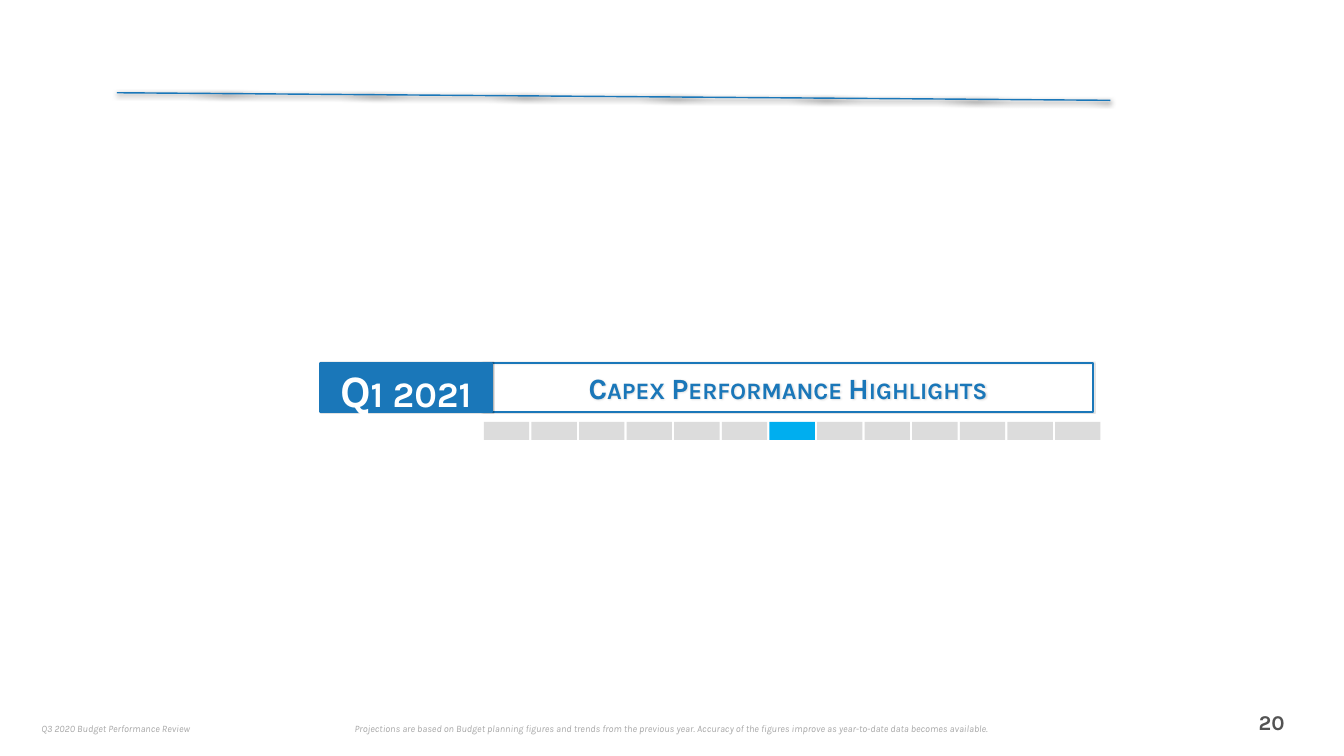
from lxml import etree
from pptx import Presentation
from pptx.dml.color import RGBColor
from pptx.enum.shapes import MSO_CONNECTOR, MSO_SHAPE
from pptx.enum.text import MSO_ANCHOR, MSO_AUTO_SIZE, PP_ALIGN
from pptx.oxml.ns import qn
from pptx.util import Pt

RECT = MSO_SHAPE.RECTANGLE
STRAIGHT = MSO_CONNECTOR.STRAIGHT
LEFT, CENTER = PP_ALIGN.LEFT, PP_ALIGN.CENTER
TOP, MIDDLE = MSO_ANCHOR.TOP, MSO_ANCHOR.MIDDLE
NO_FIT = MSO_AUTO_SIZE.NONE

BLUE = RGBColor(0x1A, 0x77, 0xB9)
CYAN = RGBColor(0x00, 0xAE, 0xEF)
PALE = RGBColor(0xDC, 0xDC, 0xDC)
GRAY = RGBColor(0xA7, 0xA7, 0xA7)
DARK = RGBColor(0x53, 0x53, 0x53)
WHITE = RGBColor(0xFF, 0xFF, 0xFF)
FONT = "Karla"

TITLE = "Capex Performance Highlights"
PERIOD = "Q1 2021"
NOTES = [
    # text, box, format
    ("Q3 2020 Budget Performance Review", (55.4, 1029, 301, 23),
     dict(size=14, color=GRAY, italic=True, inset=3.6)),
    ("Projections are based on Budget planning figures and trends from the "
     "previous year. Accuracy of the figures improve as year-to-date data "
     "becomes available.", (452, 1029, 1015, 23),
     dict(size=14, color=GRAY, italic=True, inset=3.6, align=CENTER)),
    ("20", (1787.8, 1010.2, 57.6, 42.5),
     dict(size=30, color=DARK, bold=True, inset=2.9, align=CENTER)),
]
STEPS, ACTIVE = 13, 6
STEP_X, STEP_Y, STEP_W, STEP_H, PITCH = 691.2, 602.6, 64.8, 25.9, 68


def write(shape, text, size, color, bold=False, italic=False, caps=False,
          align=LEFT, anchor=TOP, inset=0):
    frame = shape.text_frame
    frame.auto_size, frame.word_wrap = NO_FIT, True
    frame.vertical_anchor = anchor
    frame.margin_left = frame.margin_right = Pt(inset)
    frame.margin_top = frame.margin_bottom = Pt(inset)
    para = frame.paragraphs[0]
    para.alignment = align
    run = para.add_run()
    run.text = text
    font = run.font
    font.name, font.size, font.bold, font.italic = FONT, Pt(size), bold, italic
    font.color.rgb = color
    if caps:
        font._element.set("cap", "small")


def shade(shape, alpha, blur, dist, angle):
    """Give the shape a black outer shadow; angle is in degrees."""
    props = shape._element.spPr
    effects = etree.SubElement(props, qn("a:effectLst"))
    shadow = etree.SubElement(
        effects, qn("a:outerShdw"), blurRad=str(Pt(blur)), dist=str(Pt(dist)),
        dir=str(angle * 60000), rotWithShape="0")
    tint = etree.SubElement(shadow, qn("a:srgbClr"), val="000000")
    etree.SubElement(tint, qn("a:alpha"), val=str(alpha * 1000))


def outline(shape, width):
    shape.line.color.rgb = BLUE
    shape.line.width = Pt(width)


def block(slide, box, color):
    shape = slide.shapes.add_shape(RECT, *map(Pt, box))
    shape.fill.solid()
    shape.fill.fore_color.rgb = color
    shape.line.fill.background()
    return shape


def label(slide, text, box, **style):
    write(slide.shapes.add_textbox(*map(Pt, box)), text, **style)


def main():
    deck = Presentation()
    deck.slide_width, deck.slide_height = Pt(1920), Pt(1080)
    slide = deck.slides.add_slide(deck.slide_layouts[5])

    title = slide.shapes.title
    title.left, title.top, title.width, title.height = map(
        Pt, (689.8, 519.1, 871.9, 69.8))
    outline(title, 3)
    shade(title, 15, 1, 1, 0)
    write(title, TITLE, size=42, color=BLUE, bold=True, caps=True,
          align=CENTER, anchor=MIDDLE, inset=9.4)

    rule = slide.shapes.add_connector(
        STRAIGHT, *map(Pt, (167, 132.5, 1586.2, 143.3)))
    outline(rule, 2)
    shade(rule, 75, 8, 2, 90)

    for text, box, style in NOTES:
        label(slide, text, box, **style)

    for i in range(STEPS):
        step = block(slide, (STEP_X + i * PITCH, STEP_Y, STEP_W, STEP_H),
                     CYAN if i == ACTIVE else PALE)
        step.shadow.inherit = False

    badge = block(slide, (457.9, 519.1, 244.8, 69.8), BLUE)
    outline(badge, 3)
    shade(badge, 28, 1, 1, 0)
    label(slide, PERIOD, (445, 517, 269.3, 77.8), size=64, color=WHITE,
          bold=True, caps=True, align=CENTER, anchor=MIDDLE)

    deck.save("out.pptx")


if __name__ == "__main__":
    main()
